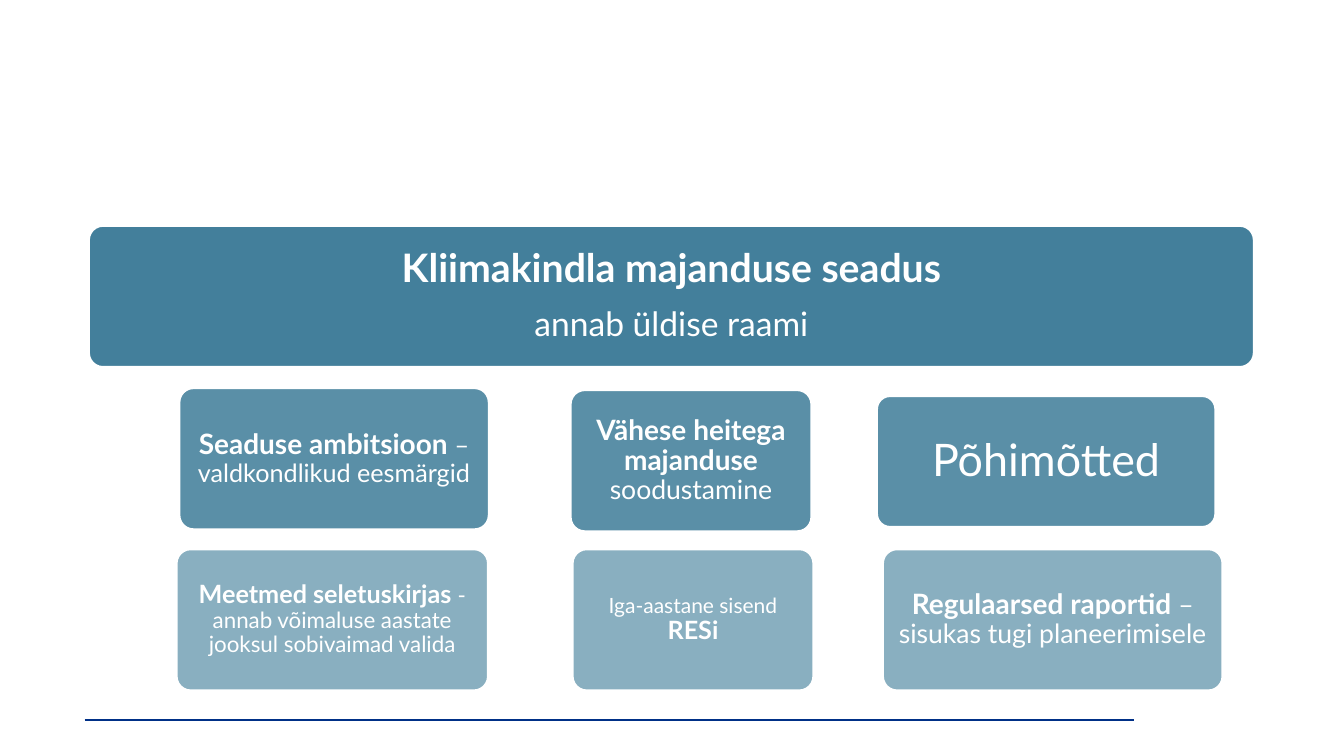
from lxml import etree
from pptx import Presentation
from pptx import util as u
from pptx.dml.color import RGBColor
from pptx.enum import shapes, text
from pptx.oxml.ns import qn

TEAL = RGBColor(0x15, 0x60, 0x82)
WHITE = RGBColor(0xFF, 0xFF, 0xFF)
NAVY = RGBColor(0x00, 0x30, 0x87)


def add_text(para, words, *, size, bold=False):
    span = para.add_run()
    span.text = words
    span.font.name = "Lato"
    span.font.size = u.Pt(size)
    span.font.bold = bold
    span.font.color.rgb = WHITE


deck = Presentation()
deck.slide_width = u.Cm(33.87)
deck.slide_height = u.Cm(19.05)
page = deck.slides.add_slide(deck.slide_layouts[6])

rule = page.shapes.add_connector(
    shapes.MSO_CONNECTOR.STRAIGHT, u.Cm(2.13), u.Cm(18.14), u.Cm(28.58), u.Cm(18.14))
rule.line.color.rgb = NAVY
rule.line.width = u.Pt(1)
etree.SubElement(rule._element.spPr, qn("a:effectLst"))

# left, top, width, height, opacity, inset, paragraphs of (space after, runs)
boxes = [
    (2.24, 5.69, 29.36, 3.56, 80, 0.31, [
        (12, [("Kliimakindla majanduse seadus", 28, True)]),
        (10, [("annab üldise raami", 24, False)])]),
    (4.52, 9.78, 7.8, 3.56, 70, 0.2, [
        (8, [("Seaduse ambitsioon ", 20, True),
             ("– valdkondlikud eesmärgid", 18, False)])]),
    (4.45, 13.84, 7.85, 3.56, 50, 0.2, [
        (8, [("Meetmed seletuskirjas ", 18, True),
             ("- annab võimaluse aastate jooksul sobivaimad valida", 16, False)])]),
    (14.43, 13.84, 6.07, 3.56, 50, 0.15, [
        (8, [("Iga-aastane sisend ", 15, False), ("RESi", 18, True)])]),
    (14.38, 9.83, 6.07, 3.56, 70, 0.2, [
        (8, [("Vähese heitega majanduse ", 20, True), ("soodustamine", 19, False)])]),
    (22.1, 9.98, 8.53, 3.3, 70, 0.33, [
        (13, [("Põhimõtted", 32, False)])]),
    (22.25, 13.84, 8.56, 3.56, 50, 0.2, [
        (8, [("Regulaarsed raportid ", 20, True),
             ("– sisukas tugi planeerimisele", 19, False)])]),
]

for left, top, width, height, opacity, inset, paragraphs in boxes:
    box = page.shapes.add_shape(
        shapes.MSO_SHAPE.ROUNDED_RECTANGLE,
        u.Cm(left), u.Cm(top), u.Cm(width), u.Cm(height))
    box.adjustments[0] = 0.1
    box.shadow.inherit = False
    box.fill.solid()
    box.fill.fore_color.rgb = TEAL
    color = box._element.spPr.find(qn("a:solidFill")).find(qn("a:srgbClr"))
    etree.SubElement(color, qn("a:alpha"), val=str(opacity * 1000))
    box.line.color.rgb = WHITE
    box.line.width = u.Pt(1.5)

    frame = box.text_frame
    frame.word_wrap = True
    frame.vertical_anchor = text.MSO_ANCHOR.MIDDLE
    frame.margin_left = frame.margin_right = u.Cm(inset)
    frame.margin_top = frame.margin_bottom = u.Cm(inset)
    for index, (space, runs) in enumerate(paragraphs):
        para = frame.add_paragraph() if index else frame.paragraphs[0]
        para.alignment = text.PP_ALIGN.CENTER
        para.line_spacing = 0.9
        para.space_after = u.Pt(space)
        for words, size, bold in runs:
            add_text(para, words, size=size, bold=bold)

deck.save("out.pptx")
